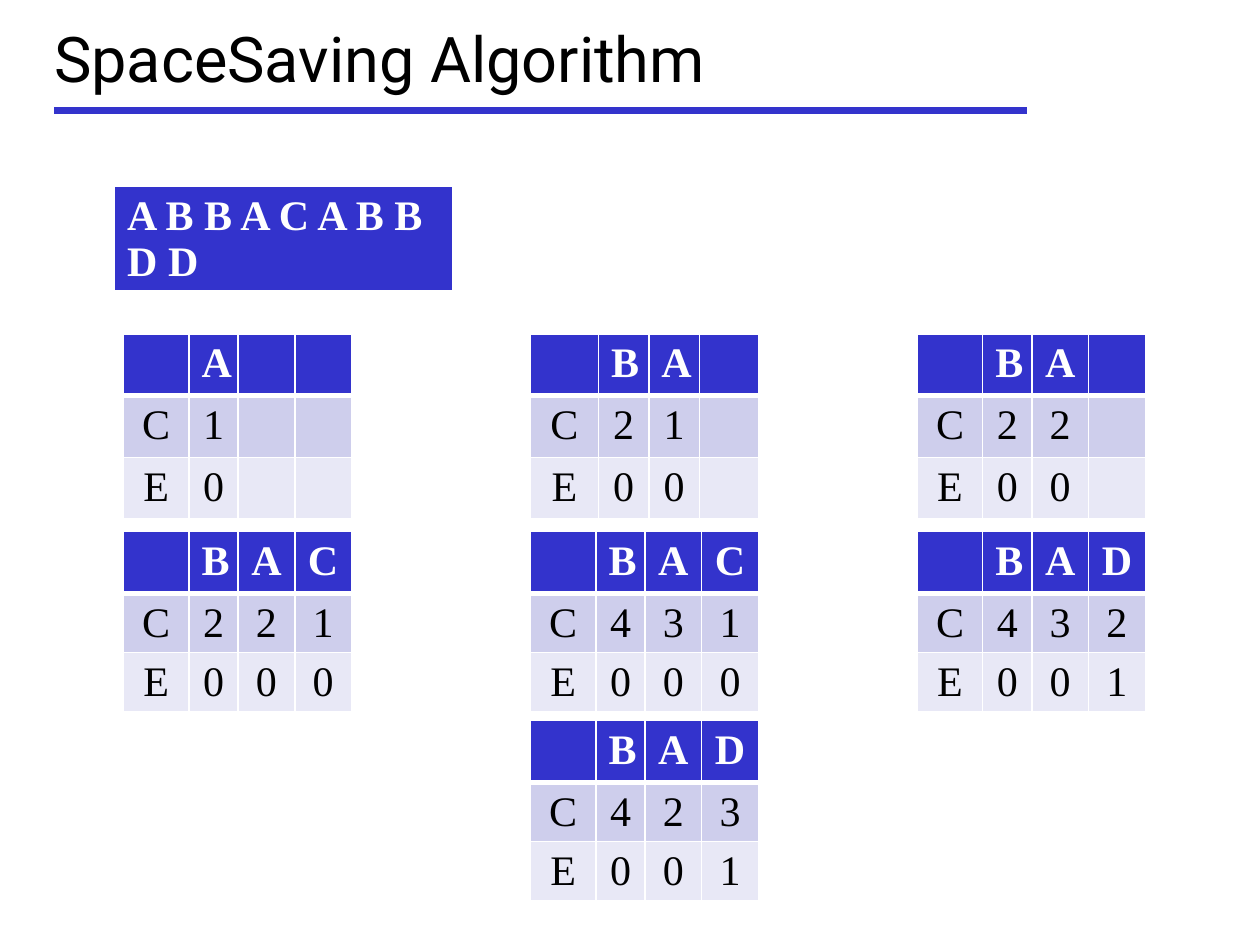
from dataclasses import dataclass

from lxml import etree
from pptx import Presentation
from pptx.dml.color import RGBColor
from pptx.enum.shapes import MSO_CONNECTOR
from pptx.enum.text import MSO_ANCHOR, PP_ALIGN
from pptx.oxml.ns import qn
from pptx.util import Inches, Pt

STRAIGHT = MSO_CONNECTOR.STRAIGHT
MIDDLE = MSO_ANCHOR.MIDDLE
LEFT = PP_ALIGN.LEFT
CENTER = PP_ALIGN.CENTER


@dataclass(frozen=True)
class Theme:
    accent: str = "3333CC"
    count_fill: str = "CECEEC"
    error_fill: str = "E8E8F6"
    white: str = "FFFFFF"
    black: str = "000000"
    title_font: str = "Roboto"
    body_font: str = "Times New Roman"
    title_size: int = 36
    body_size: int = 24
    border: int = 1
    header_border: int = 3
    rule: int = 4


THEME = Theme()
TITLE_ONLY = 5
COLUMN_LEFTS = (0.98, 4.21, 7.28)
ROW_TOPS = (2.65, 4.22, 5.72)
WIDTHS = (0.52, 0.39, 0.45, 0.45)
WIDE_WIDTHS = (0.54, 0.4, 0.4, 0.47)
FULL_ROW, BLANK_ROW = 0.47, 0.49

SUMMARIES = (
    (0, 0, WIDTHS, "A", "1", "0"),
    (1, 0, WIDE_WIDTHS, "BA", "21", "00"),
    (2, 0, WIDTHS, "BA", "22", "00"),
    (0, 1, WIDTHS, "BAC", "221", "000"),
    (1, 1, WIDTHS, "BAC", "431", "000"),
    (2, 1, WIDTHS, "BAD", "432", "001"),
    (1, 2, WIDTHS, "BAD", "423", "001"),
)


def set_font(font, name, size, color, bold=False):
    font.name = name
    font.size = Pt(size)
    font.bold = bold
    font.color.rgb = RGBColor.from_string(color)


def add_title(page, text):
    title = page.shapes.title
    title.left, title.top = Inches(0.33), Inches(0.04)
    title.width, title.height = Inches(7.98), Inches(0.83)
    title.text_frame.text = text
    title.text_frame.vertical_anchor = MIDDLE
    para = title.text_frame.paragraphs[0]
    para.alignment = LEFT
    set_font(para.font, THEME.title_font, THEME.title_size, THEME.black)


def add_rule(page):
    rule = page.shapes.add_connector(
        STRAIGHT, Inches(0.43), Inches(0.88), Inches(8.15), Inches(0.88)
    )
    rule.line.color.rgb = RGBColor.from_string(THEME.accent)
    rule.line.width = Pt(THEME.rule)
    etree.SubElement(rule._element.spPr, qn("a:effectLst"))


def set_borders(cell, bottom):
    properties = cell._tc.get_or_add_tcPr()
    widths = {"L": THEME.border, "R": THEME.border, "T": THEME.border, "B": bottom}
    for side, width in widths.items():
        line = etree.SubElement(properties, qn(f"a:ln{side}"), w=str(Pt(width)))
        fill = etree.SubElement(line, qn("a:solidFill"))
        etree.SubElement(fill, qn("a:srgbClr"), val=THEME.white)


def format_cell(cell, text, fill, header, alignment):
    set_borders(cell, THEME.header_border if header else THEME.border)
    cell.fill.solid()
    cell.fill.fore_color.rgb = RGBColor.from_string(fill)
    if text:
        cell.text = text
        para = cell.text_frame.paragraphs[0]
        para.alignment = alignment
        color = THEME.white if header else THEME.black
        set_font(para.font, THEME.body_font, THEME.body_size, color, header)


def add_grid(page, left, top, widths, heights, rows, alignment=CENTER):
    frame = page.shapes.add_table(
        len(rows), len(widths), Inches(left), Inches(top),
        Inches(sum(widths)), Inches(sum(heights)),
    )
    table = frame.table
    for column, width in zip(table.columns, widths):
        column.width = Inches(width)
    fills = (THEME.accent, THEME.count_fill, THEME.error_fill)
    for r, (texts, height) in enumerate(zip(rows, heights)):
        table.rows[r].height = Inches(height)
        for c, text in enumerate(texts):
            format_cell(table.cell(r, c), text, fills[r], r == 0, alignment)


def add_summary(page, column, row, widths, items, counts, errors):
    labelled = (("", items), ("C", counts), ("E", errors))
    rows = [[label, *values.ljust(3)] for label, values in labelled]
    rows = [[text.strip() for text in texts] for texts in rows]
    heights = [FULL_ROW if all(texts) else BLANK_ROW for texts in rows]
    add_grid(page, COLUMN_LEFTS[column], ROW_TOPS[row], widths, heights, rows)


def main():
    deck = Presentation()
    deck.slide_width, deck.slide_height = Inches(10), Inches(7.5)
    page = deck.slides.add_slide(deck.slide_layouts[TITLE_ONLY])
    add_rule(page)
    add_title(page, "SpaceSaving Algorithm")
    add_grid(page, 0.91, 1.48, [2.68], [0.81], [["A B B A C A B B D D"]], LEFT)
    for summary in SUMMARIES:
        add_summary(page, *summary)
    deck.save("out.pptx")


if __name__ == "__main__":
    main()
